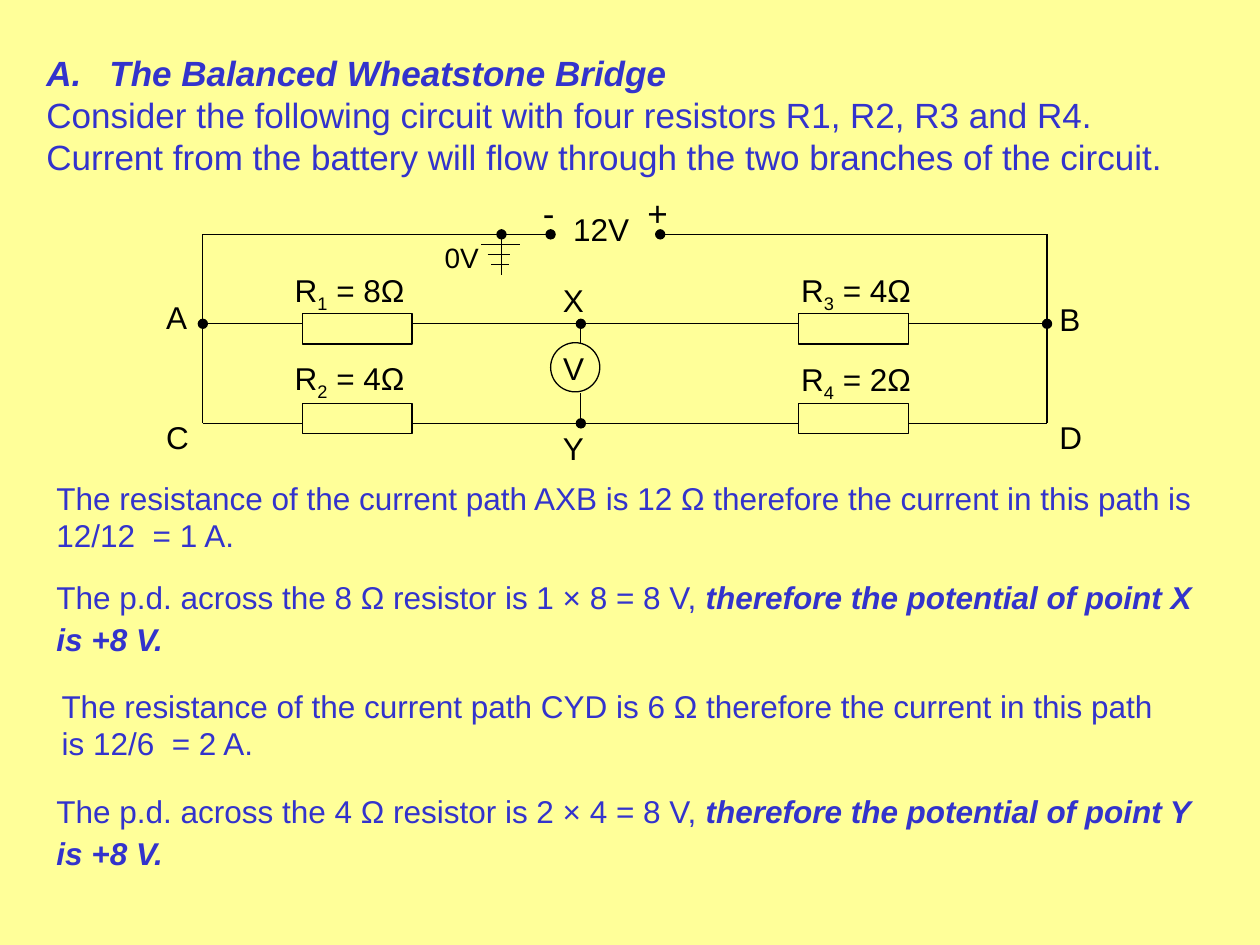
"""Build a slide that explains the balanced Wheatstone bridge."""
import pptx
import pptx.util
import pptx.dml.color
import pptx.enum.shapes
import pptx.oxml.ns
from lxml import etree

Inches, Pt = pptx.util.Inches, pptx.util.Pt
Shape = pptx.enum.shapes.MSO_SHAPE
INK, BLUE, PAPER = "000000", "3333CC", "FFFF99"

LEFT, RIGHT, MIDDLE, EARTH = 1.61, 8.31, 4.61, 3.98
SUPPLY, UPPER, LOWER = 1.86, 2.57, 3.36
RESISTOR_WIDTH, RESISTOR_HEIGHT = 0.87, 0.24
FIRST, SECOND = 2.4, 6.34
METER = (4.37, 2.72, 0.39, 0.39)

RESISTORS = [
    ("1", " = 8Ω", FIRST, 2.49, 2.24, 2.1),
    ("3", " = 4Ω", SECOND, 2.49, 6.26, 2.1),
    ("2", " = 4Ω", FIRST, 3.2, 2.24, 2.8),
    ("4", " = 2Ω", SECOND, 3.2, 6.26, 2.81),
]
LABELS = [
    ("A", 1.22, 2.32, 0.47, 18),
    ("B", 8.31, 2.33, 0.47, 18),
    ("C", 1.22, 3.27, 0.47, 18),
    ("D", 8.31, 3.27, 0.47, 18),
    ("X", 4.37, 2.18, 0.47, 18),
    ("Y", 4.37, 3.36, 0.47, 18),
    ("V", 4.37, 2.72, 0.39, 18),
    ("12V", 4.45, 1.62, 0.79, 18),
    ("0V", 3.43, 1.86, 0.5, 16),
    ("-", 4.21, 1.47, 0.24, 20),
    ("+", 5.04, 1.47, 0.36, 20),
]
PLAIN_WIRES = [
    (LEFT, LOWER, LEFT, SUPPLY),
    (RIGHT, LOWER, RIGHT, SUPPLY),
    (FIRST, LOWER, LEFT, LOWER),
    (SECOND + RESISTOR_WIDTH, LOWER, RIGHT, LOWER),
    (FIRST + RESISTOR_WIDTH, UPPER, SECOND, UPPER),
    (FIRST + RESISTOR_WIDTH, LOWER, SECOND, LOWER),
    (3.82, 1.94, 4.13, 1.94),
    (3.87, 2.02, 4.05, 2.02),
    (3.9, 2.1, 4.04, 2.1),
]
DOTTED_WIRES = [
    (SECOND + RESISTOR_WIDTH, UPPER, RIGHT, UPPER),
    (FIRST, UPPER, LEFT, UPPER),
    (LEFT, SUPPLY, 4.37, SUPPLY),
    (RIGHT, SUPPLY, 5.24, SUPPLY),
    (MIDDLE, 2.73, MIDDLE, UPPER),
    (MIDDLE, 3.12, MIDDLE, LOWER),
    (EARTH, 2.18, EARTH, SUPPLY),
]
HEADING = [
    "The Balanced Wheatstone Bridge",
    "Consider the following circuit with four resistors R1, R2, R3 and R4.",
    "Current from the battery will flow through the two branches of the circuit.",
]
REASONING = [
    ("The resistance of the current path AXB is 12 Ω therefore the current "
     "in this path is 12/12  = 1 A.", "", (0.35, 3.75, 9.37, 0.7)),
    ("The p.d. across the 8 Ω resistor is 1 × 8 = 8 V, ",
     "therefore the potential of point X is +8 V.", (0.35, 4.54, 9.37, 0.73)),
    ("The resistance of the current path CYD is 6 Ω therefore the current "
     "in this path is 12/6  = 2 A.", "", (0.39, 5.4, 9.02, 0.7)),
    ("The p.d. across the 4 Ω resistor is 2 × 4 = 8 V, ",
     "therefore the potential of point Y is +8 V.", (0.35, 6.24, 9.37, 0.73)),
]


def color(value):
    return pptx.dml.color.RGBColor.from_string(value)


def add_element(parent, tag, **attributes):
    return etree.SubElement(parent, pptx.oxml.ns.qn(tag), attributes)


def style(font, size, ink):
    font.name, font.size = "Arial", Pt(size)
    font.color.rgb = color(ink)


def add_text(page, place, size, ink, *texts):
    box = page.shapes.add_textbox(*map(Inches, place))
    box.text_frame.word_wrap = True
    para = box.text_frame.paragraphs[0]
    style(para.font, size, ink)
    for text in texts:
        para.add_run().text = text
    return box.text_frame


def add_outline(page, kind, place):
    shape = page.shapes.add_shape(kind, *map(Inches, place))
    shape.shadow.inherit = False
    shape.fill.background()
    shape.line.color.rgb = color(INK)
    shape.line.width = Pt(0.75)


def add_wire(page, ends, dotted):
    wire = page.shapes.add_connector(
        pptx.enum.shapes.MSO_CONNECTOR.STRAIGHT, *map(Inches, ends))
    wire.line.color.rgb = color(INK)
    wire.line.width = Pt(0.75)
    if dotted:
        add_element(wire.line._get_or_add_ln(), "a:tailEnd", type="oval")
    add_element(wire._element.spPr, "a:effectLst")


def add_heading(page):
    frame = add_text(page, (0.27, 0.36, 9.21, 1.1), 20, BLUE, HEADING[0])
    for text in HEADING[1:]:
        para = frame.add_paragraph()
        para.text = text
        style(para.font, 20, BLUE)
    for para in frame.paragraphs:
        properties = para._p.get_or_add_pPr()
        properties.set("marL", str(Inches(0.5)))
        properties.set("indent", str(Inches(-0.5)))
    title = frame.paragraphs[0]
    title.font.bold = title.font.italic = True
    bullet = etree.Element(pptx.oxml.ns.qn("a:buAutoNum"), type="alphaUcPeriod")
    title._p.get_or_add_pPr().insert(0, bullet)


def add_circuit(page):
    for number, value, left, top, label_left, label_top in RESISTORS:
        add_outline(page, Shape.RECTANGLE,
                    (left, top, RESISTOR_WIDTH, RESISTOR_HEIGHT))
        frame = add_text(page, (label_left, label_top, 1.42, 0.4), 18, INK,
                         "R", number, value)
        subscript = frame.paragraphs[0].runs[1]
        subscript._r.get_or_add_rPr().set("baseline", "-25000")
    add_outline(page, Shape.OVAL, METER)
    for wires, dotted in ((PLAIN_WIRES, False), (DOTTED_WIRES, True)):
        for ends in wires:
            add_wire(page, ends, dotted)
    for text, left, top, width, size in LABELS:
        add_text(page, (left, top, width, 0.4), size, INK, text)


def add_reasoning(page):
    for statement, conclusion, place in REASONING:
        frame = add_text(page, place, 18, BLUE, statement)
        if conclusion:
            para = frame.paragraphs[0]
            span = para.add_run()
            span.text = conclusion
            span.font.bold = span.font.italic = True
            space = para.add_run()
            space.text = " "
            space.font.size = Pt(20)


def main():
    deck = pptx.Presentation()
    deck.slide_width, deck.slide_height = Inches(10), Inches(7.5)
    page = deck.slides.add_slide(deck.slide_layouts[6])
    page.background.fill.solid()
    page.background.fill.fore_color.rgb = color(PAPER)
    add_circuit(page)
    add_heading(page)
    add_reasoning(page)
    deck.save("out.pptx")


if __name__ == "__main__":
    main()
